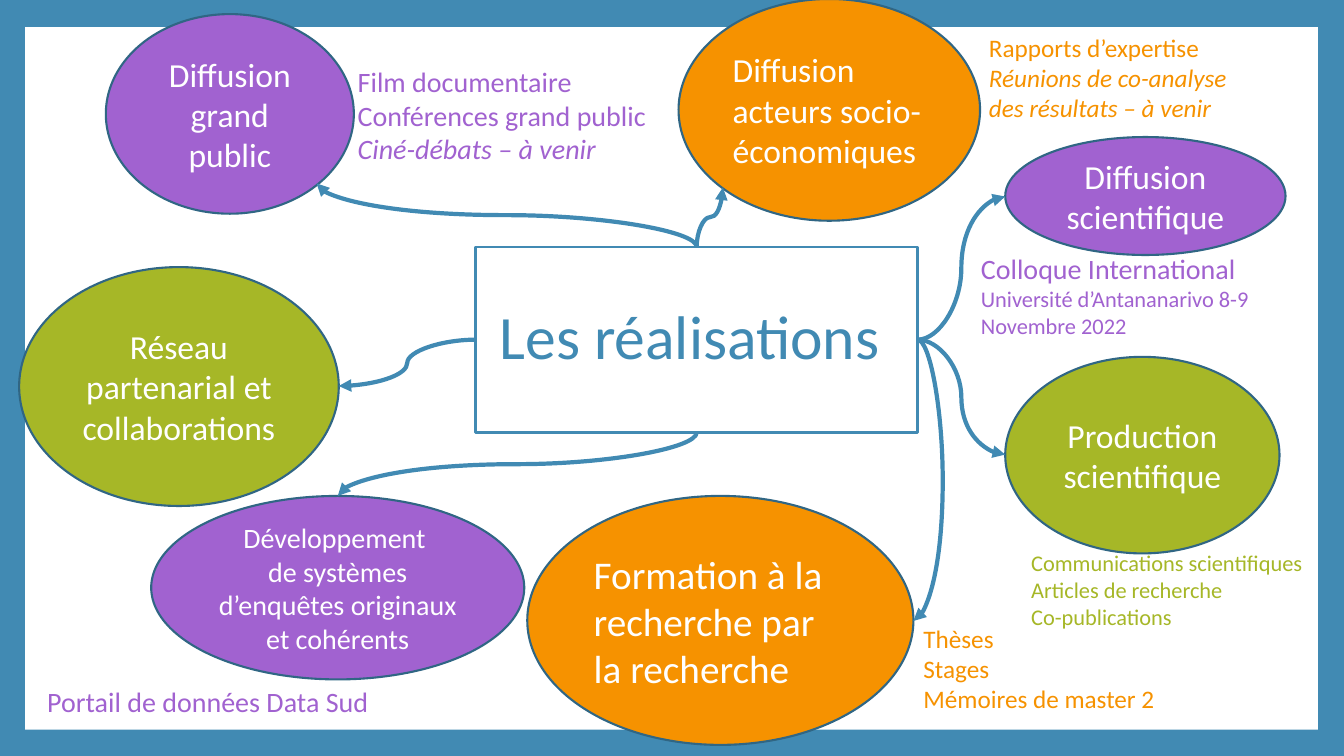
from pptx import Presentation
from pptx.dml.color import RGBColor
from pptx.enum.shapes import MSO_CONNECTOR as CONN, MSO_SHAPE as SHAPE
from pptx.enum.text import MSO_ANCHOR as ANCHOR, MSO_AUTO_SIZE as AUTO, PP_ALIGN as ALIGN
from pptx.oxml.ns import qn
from pptx.util import Inches, Pt
from lxml.etree import SubElement

BLUE = RGBColor(0x41, 0x8A, 0xB3)
OUTLINE = RGBColor(0x30, 0x66, 0x84)
GREEN = RGBColor(0xA6, 0xB7, 0x27)
ORANGE = RGBColor(0xF6, 0x92, 0x00)
PURPLE = RGBColor(0xA1, 0x62, 0xD0)
WHITE = RGBColor(0xFF, 0xFF, 0xFF)

TOPICS = [
    ((0.19, 2.65, 3.17, 2.37), GREEN, "Réseau partenarial et collaborations", 24, ALIGN.CENTER),
    ((5.23, 4.92, 3.83, 2.47), ORANGE, "Formation à la recherche par la recherche", 28, ALIGN.LEFT),
    ((1.5, 4.92, 3.7, 1.82), PURPLE,
     "Développement \nde systèmes d’enquêtes originaux et cohérents", 20, ALIGN.CENTER),
    ((9.97, 3.54, 2.72, 1.95), GREEN, "Production scientifique", 24, ALIGN.CENTER),
    ((1.05, 0.14, 2.46, 1.98), PURPLE, "Diffusion grand public", 24, ALIGN.CENTER),
    ((6.73, -0.01, 2.99, 2.2), ORANGE, "Diffusion acteurs socio-économiques", 24, ALIGN.LEFT),
    ((9.97, 1.36, 2.78, 1.17), PURPLE, "Diffusion scientifique", 24, ALIGN.CENTER),
]

DETAILS = [
    ((9.21, 0.27, 3.16, 1.01), ORANGE, 18, 0.5,
     [["Rapports d’expertise"],
      [("Réunions de co-analyse des résultats – à venir", {"italic": True})]]),
    ((10.13, 5.4, 3.03, 0.94), GREEN, 16, 0,
     [["Communications scientifiques"], ["Articles de recherche"], ["Co-publications"]]),
    ((2.95, 0.59, 6.67, 1.11), PURPLE, 20, 0.5,
     [["Film documentaire"], ["Conférences grand public"],
      [("Ciné-débats – à venir", {"italic": True})]]),
    ((8.56, 6.13, 3.16, 1.01), ORANGE, 18, 0.5,
     [["Thèses"], ["Stages"], ["Mémoires de master 2"]]),
    ((9.13, 2.45, 3.81, 0.98), PURPLE, 20, 0.5,
     [["Colloque International ",
       ("Université d’Antananarivo 8-9 Novembre 2022", {"size": 16})]]),
    ((-0.13, 6.74, 6.67, 0.44), PURPLE, 20, 0.5, [["Portail de données Data Sud"]]),
]

CENTRE = (4.72, 2.45, 4.38, 1.84)
SIDE_ENDS = [(3.36, 3.83), (9.97, 4.51), (9.97, 1.95)]
UPRIGHT_ENDS = [(3.35, 4.92), (7.17, 1.86), (3.14, 1.82)]
TRAINING_END = (9.06, 6.16)


def write(tf, paragraphs, size=18, color=WHITE, align=ALIGN.LEFT, indent=0, spacing=None):
    """Fill a text frame; each paragraph is a list of strings or (string, format) pairs."""
    tf.word_wrap = True
    for i, parts in enumerate(paragraphs):
        p = tf.paragraphs[0] if i == 0 else tf.add_paragraph()
        p.alignment = align
        if spacing:
            p.line_spacing = spacing
        if indent:
            p.level = 1
            pPr = p._p.get_or_add_pPr()
            pPr.set("marL", str(Inches(indent)))
            pPr.set("indent", "0")
        for part in parts:
            text, extra = (part, {}) if isinstance(part, str) else part
            for j, line in enumerate(text.split("\n")):
                if j:
                    p.add_line_break()
                r = p.add_run()
                r.text = line
                r.font.name = "Calibri"
                r.font.size = Pt(extra.get("size", size))
                r.font.color.rgb = color
                if extra.get("italic"):
                    r.font.italic = True


def add_panel(slide, kind, box, fill=None, line=None, width=1.5):
    """Add a flat preset shape with an optional fill and outline."""
    sp = slide.shapes.add_shape(kind, *map(Inches, box))
    sp.shadow.inherit = False
    if fill is None:
        sp.fill.background()
    else:
        sp.fill.solid()
        sp.fill.fore_color.rgb = fill
    if line is None:
        sp.line.fill.background()
    else:
        sp.line.color.rgb = line
        sp.line.width = Pt(width)
    sp.text_frame.vertical_anchor = ANCHOR.MIDDLE
    return sp


def add_topic(slide, box, fill, text, size, align):
    """Add a coloured ellipse naming one achievement."""
    sp = add_panel(slide, SHAPE.OVAL, box, fill, OUTLINE)
    write(sp.text_frame, [[text]], size=size, align=align)


def add_detail(slide, box, color, size, indent, paragraphs):
    """Add the free text that goes with a topic."""
    tf = slide.shapes.add_textbox(*map(Inches, box)).text_frame
    write(tf, paragraphs, size=size, color=color, indent=indent)
    tf.auto_size = AUTO.SHAPE_TO_FIT_TEXT


def add_arrow(slide, start, end, upright=False, bend=None):
    """Add a curved arrow that leaves sideways, or vertically if upright; bend is its middle x."""
    (x1, y1), (x2, y2) = start, end
    dx, dy = x2 - x1, y2 - y1
    if upright:
        cx, cy = (x1 + x2) / 2, (y1 + y2) / 2
        w, h = abs(dy), -dx if dy > 0 else dx
        x1, y1, x2, y2 = cx - w / 2, cy - h / 2, cx + w / 2, cy + h / 2
    c = slide.shapes.add_connector(CONN.CURVE, *map(Inches, (x1, y1, x2, y2)))
    if upright:
        c.rotation = 90 if dy > 0 else 270
    c.line.color.rgb = BLUE
    c.line.width = Pt(3)
    SubElement(c.line._get_or_add_ln(), qn("a:tailEnd"), type="triangle")
    spPr = c._element.spPr
    SubElement(spPr, qn("a:effectLst"))
    if bend is not None:
        ratio = round((bend - x1) / dx * 100000)
        guides = spPr.find(qn("a:prstGeom")).find(qn("a:avLst"))
        SubElement(guides, qn("a:gd"), name="adj1", fmla=f"val {ratio}")


def add_arrows(slide, box):
    """Link the edges of the central box to the topics."""
    x, y, w, h = box
    middle_x, middle_y = x + w / 2, y + h / 2
    for end in SIDE_ENDS:
        add_arrow(slide, (x if end[0] < x else x + w, middle_y), end)
    for end in UPRIGHT_ENDS:
        add_arrow(slide, (middle_x, y if end[1] < y else y + h), end, upright=True)
    add_arrow(slide, (x + w, middle_y), TRAINING_END, bend=x + w + 0.25)


def add_centre(slide, box):
    """Add the central title box."""
    sp = add_panel(slide, SHAPE.RECTANGLE, box, line=BLUE, width=2)
    write(sp.text_frame, [["Les réalisations "]], size=44, color=BLUE,
          align=ALIGN.CENTER, spacing=0.9)


def main():
    """Build the mind map slide and save it."""
    prs = Presentation()
    prs.slide_width, prs.slide_height = Inches(13.33), Inches(7.5)
    s = prs.slides.add_slide(prs.slide_layouts[6])
    s.background.fill.solid()
    s.background.fill.fore_color.rgb = BLUE
    add_panel(s, SHAPE.RECTANGLE, (0.25, 0.27, 12.82, 6.97), WHITE)
    add_centre(s, CENTRE)
    for topic in TOPICS:
        add_topic(s, *topic)
    add_arrows(s, CENTRE)
    for detail in DETAILS:
        add_detail(s, *detail)
    prs.save("out.pptx")


if __name__ == "__main__":
    main()
